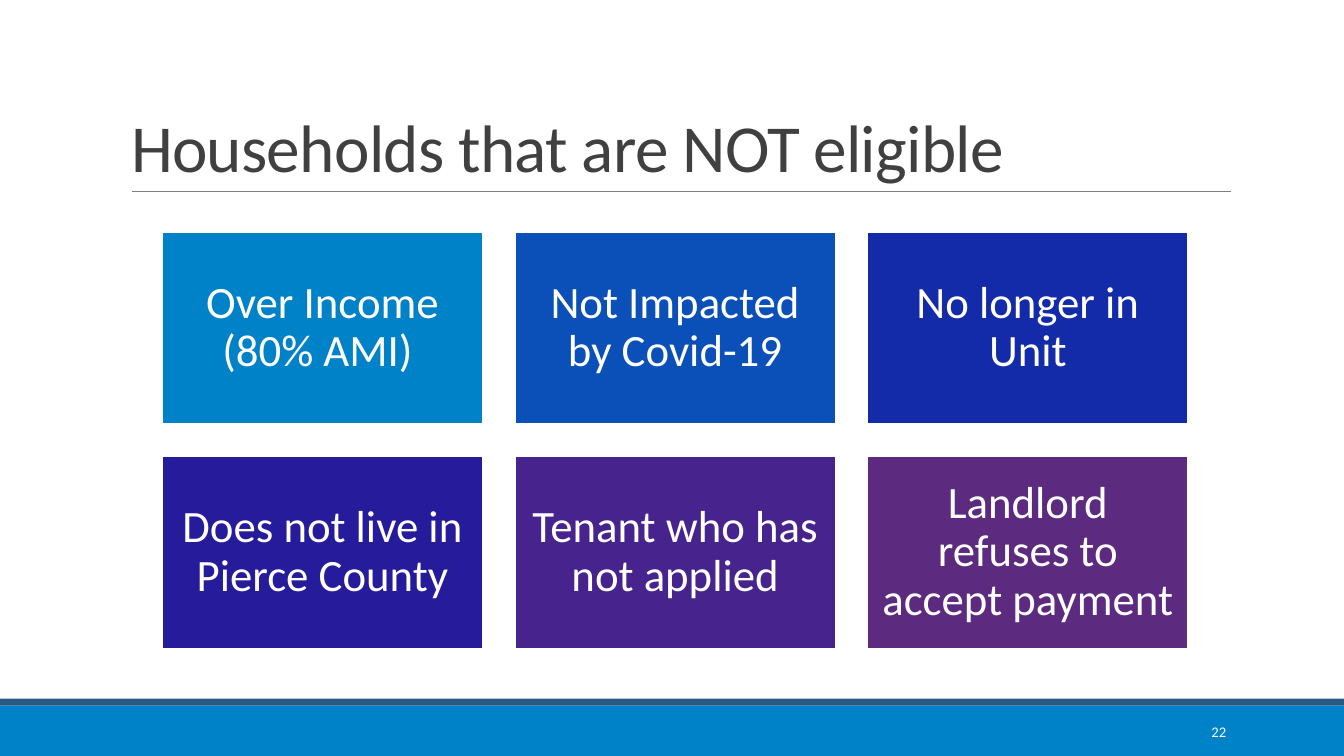
from dataclasses import dataclass

from lxml import etree
from pptx import Presentation
from pptx.dml.color import RGBColor
from pptx.enum import shapes, text
from pptx.oxml.ns import qn
from pptx.util import Pt


@dataclass(frozen=True)
class Theme:
    font: str = "Calibri"
    title_size: float = 48
    card_size: float = 32
    number_size: float = 10.5
    title_color: str = "404040"
    light: str = "FFFFFF"
    rule: str = "808080"
    footer: str = "0082C8"
    footer_edge: str = "285A83"


@dataclass(frozen=True)
class Frame:
    left: float
    top: float
    width: float
    height: float

    def lengths(self) -> list:
        return [Pt(value) for value in (self.left, self.top, self.width, self.height)]


@dataclass(frozen=True)
class Card:
    label: str
    fill: str


THEME = Theme()
PAGE_WIDTH, PAGE_HEIGHT = 960, 540
COLUMNS = 3
FIRST_CARD = Frame(115.9, 165.6, 229, 137.4)
CARD_GAP = 22.9
CARDS = [
    Card("Over Income (80% AMI) ", "0082C8"),
    Card("Not Impacted by Covid-19", "0A50B8"),
    Card("No longer in Unit", "132BA9"),
    Card("Does not live in Pierce County", "261C9B"),
    Card("Tenant who has not applied", "47248D"),
    Card("Landlord refuses to accept payment", "5C2B80"),
]


def apply(target, values: dict) -> None:
    for name, value in values.items():
        setattr(target, name, value)


def write(box, label: str, size: float, color: str, frame_format: dict, para_format: dict):
    """Put one formatted line of text in a shape and return its span."""
    apply(box.text_frame, {"word_wrap": True, "auto_size": text.MSO_AUTO_SIZE.NONE, **frame_format})
    para = box.text_frame.paragraphs[0]
    apply(para, para_format)
    span = para.add_run()
    span.text = label
    apply(span.font, {"name": THEME.font, "size": Pt(size)})
    span.font.color.rgb = RGBColor.from_string(color)
    return span


def add_block(page, frame: Frame, fill: str):
    """Add a filled rectangle without outline or shadow."""
    box = page.shapes.add_shape(shapes.MSO_SHAPE.RECTANGLE, *frame.lengths())
    box.shadow.inherit = False
    box.fill.solid()
    box.fill.fore_color.rgb = RGBColor.from_string(fill)
    box.line.fill.background()
    return box


def add_footer(page) -> None:
    add_block(page, Frame(0, 504, PAGE_WIDTH, 36), THEME.footer)
    add_block(page, Frame(0, 499, PAGE_WIDTH, 5), THEME.footer_edge)
    number = page.shapes.add_textbox(*Frame(780, 508.5, 103, 28.7).lengths())
    write(number, "22", THEME.number_size, THEME.light,
          {"vertical_anchor": text.MSO_ANCHOR.MIDDLE},
          {"alignment": text.PP_ALIGN.RIGHT, "space_after": Pt(6)})


def add_title(page) -> None:
    title = page.shapes.title
    apply(title, dict(zip(("left", "top", "width", "height"),
                          Frame(86.4, 22.3, 792, 114.5).lengths())))
    span = write(title, "Households that are NOT eligible", THEME.title_size, THEME.title_color,
                 {"vertical_anchor": text.MSO_ANCHOR.BOTTOM},
                 {"alignment": text.PP_ALIGN.LEFT, "line_spacing": 0.85})
    span.font._element.set("spc", "-50")
    rule = page.shapes.add_connector(shapes.MSO_CONNECTOR.STRAIGHT,
                                     Pt(94.3), Pt(136.8), Pt(879), Pt(136.8))
    rule.line.width = Pt(0.5)
    rule.line.color.rgb = RGBColor.from_string(THEME.rule)
    etree.SubElement(rule._element.spPr, qn("a:effectLst"))


def add_card(page, card: Card, index: int) -> None:
    row, column = divmod(index, COLUMNS)
    frame = Frame(FIRST_CARD.left + column * (FIRST_CARD.width + CARD_GAP),
                  FIRST_CARD.top + row * (FIRST_CARD.height + CARD_GAP),
                  FIRST_CARD.width, FIRST_CARD.height)
    box = add_block(page, frame, card.fill)
    box.line.color.rgb = RGBColor.from_string(THEME.light)
    box.line.width = Pt(1.25)
    margins = {f"margin_{side}": Pt(9.6) for side in ("left", "top", "right", "bottom")}
    write(box, card.label, THEME.card_size, THEME.light,
          {"vertical_anchor": text.MSO_ANCHOR.MIDDLE, **margins},
          {"alignment": text.PP_ALIGN.CENTER, "line_spacing": 0.9})


def main() -> None:
    deck = Presentation()
    apply(deck, {"slide_width": Pt(PAGE_WIDTH), "slide_height": Pt(PAGE_HEIGHT)})
    page = deck.slides.add_slide(deck.slide_layouts.get_by_name("Title Only"))
    add_footer(page)
    add_title(page)
    for index, card in enumerate(CARDS):
        add_card(page, card, index)
    deck.save("out.pptx")


if __name__ == "__main__":
    main()
